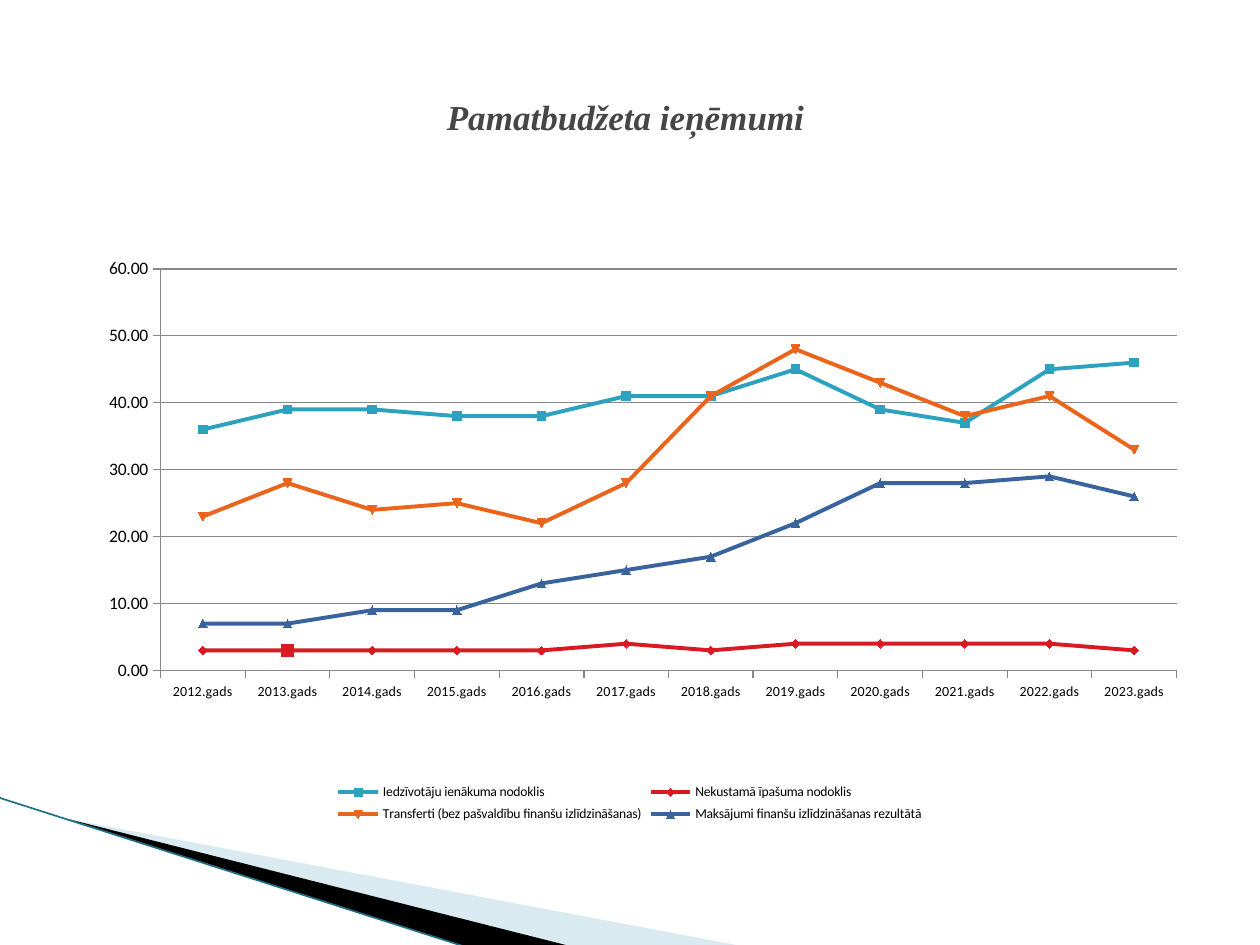
from lxml import etree
from pptx import Presentation
from pptx.chart.data import CategoryChartData
from pptx.dml.color import RGBColor
from pptx.enum.chart import (XL_CHART_TYPE, XL_LEGEND_POSITION as LegendPos,
                             XL_MARKER_STYLE as Marker, XL_TICK_MARK as Tick)
from pptx.enum.shapes import MSO_CONNECTOR
from pptx.enum.text import MSO_ANCHOR, PP_ALIGN
from pptx.oxml.ns import qn
from pptx.util import Inches, Pt

YEARS = [f"{year}.gads" for year in range(2012, 2024)]
REVENUES = [
    ("Iedzīvotāju ienākuma nodoklis", "2DA2BF",
     [36, 39, 39, 38, 38, 41, 41, 45, 39, 37, 45, 46]),
    ("Nekustamā īpašuma nodoklis", "DA1A23",
     [3, 3, 3, 3, 3, 4, 3, 4, 4, 4, 4, 3]),
    ("Transferti (bez pašvaldību finanšu izlīdzināšanas)", "EB641B",
     [23, 28, 24, 25, 22, 28, 41, 48, 43, 38, 41, 33]),
    ("Maksājumi finanšu izlīdzināšanas rezultātā", "39639D",
     [7, 7, 9, 9, 13, 15, 17, 22, 28, 28, 29, 26]),
]


def rgb(color):
    return RGBColor.from_string(color)


def style_font(font, size, color="000000", name="Calibri"):
    font.size, font.name = Pt(size), name
    font.color.rgb = rgb(color)


def add_wedge(slide, points, color, alpha=None):
    corners = [(Inches(x), Inches(y)) for x, y in points]
    builder = slide.shapes.build_freeform(*corners[0])
    builder.add_line_segments(corners[1:], close=True)
    wedge = builder.convert_to_shape()
    wedge.shadow.inherit = False
    wedge.fill.solid()
    wedge.fill.fore_color.rgb = rgb(color)
    wedge.line.fill.background()
    if alpha is not None:
        fill_color = wedge.fill._xPr.find(qn("a:solidFill"))[0]
        etree.SubElement(fill_color, qn("a:alpha"), val=str(alpha * 1000))


def add_corner_decoration(slide, left, top, bottom):
    # Pale and black wedges fanning out from one tip
    add_wedge(slide, [(left, top), (5.95, bottom), (4.56, bottom)], "A0CBDC", 40)
    add_wedge(slide, [(left, top), (4.57, bottom), (3.72, bottom)], "000000")
    # Edge line
    edge = slide.shapes.add_connector(MSO_CONNECTOR.STRAIGHT, Inches(-0.01),
                                      Inches(6.33), Inches(3.71), Inches(bottom))
    edge.line.color.rgb = rgb("1F7085")
    edge.line.width = Pt(0.95)
    etree.SubElement(edge._element.spPr, qn("a:effectLst"))


def add_title(slide, left, top, width, height):
    title = slide.shapes.title
    title.left, title.top = Inches(left), Inches(top)
    title.width, title.height = Inches(width), Inches(height)
    frame = title.text_frame
    frame.text = "Pamatbudžeta ieņēmumi "
    frame.vertical_anchor = MSO_ANCHOR.MIDDLE
    heading = frame.paragraphs[0]
    heading.alignment = PP_ALIGN.CENTER
    font = heading.runs[0].font
    style_font(font, 20, "464646", "Times New Roman")
    font.bold = font.italic = True


def place_plot(chart, x, y, width, height):
    plot_area = chart._chartSpace.chart.plotArea
    for old in plot_area.findall(qn("c:layout")):
        plot_area.remove(old)
    layout = etree.Element(qn("c:layout"))
    manual = etree.SubElement(layout, qn("c:manualLayout"))
    settings = [("layoutTarget", "inner"), ("xMode", "edge"), ("yMode", "edge"),
                ("x", x), ("y", y), ("w", width), ("h", height)]
    for tag, value in settings:
        etree.SubElement(manual, qn(f"c:{tag}"), val=str(value))
    plot_area.insert(0, layout)


def style_axis(axis, size):
    style_font(axis.tick_labels.font, size)
    axis.major_tick_mark, axis.minor_tick_mark = Tick.OUTSIDE, Tick.NONE
    axis.format.line.color.rgb = rgb("878787")


def style_marker(marker, style, size, color):
    marker.style, marker.size = style, size
    marker.format.fill.solid()
    marker.format.fill.fore_color.rgb = rgb(color)
    marker.format.line.color.rgb = rgb(color)


def style_line(line, color):
    line.color.rgb = rgb(color)
    line.width = Pt(2.25)


def add_revenue_chart(slide, left, top, width, height):
    revenue_data = CategoryChartData(number_format="0.00")
    revenue_data.categories = YEARS
    for name, _, values in REVENUES:
        revenue_data.add_series(name, values)
    chart = slide.shapes.add_chart(
        XL_CHART_TYPE.LINE_MARKERS, Inches(left), Inches(top),
        Inches(width), Inches(height), revenue_data).chart
    chart.has_title = False
    style_font(chart.font, 10)
    place_plot(chart, 0.086, 0.104, 0.896, 0.644)

    # Axes and gridlines
    style_axis(chart.category_axis, 8)
    shares = chart.value_axis
    style_axis(shares, 10)
    shares.minimum_scale, shares.maximum_scale, shares.major_unit = 0, 60, 10
    shares.tick_labels.number_format = "0.00"
    shares.tick_labels.number_format_is_linked = False
    shares.has_major_gridlines = True
    shares.major_gridlines.format.line.color.rgb = rgb("878787")

    # Legend
    chart.has_legend = True
    chart.legend.position = LegendPos.BOTTOM
    chart.legend.include_in_layout = False
    style_font(chart.legend.font, 7.8)

    # Revenue lines
    plot = chart.plots[0]
    plot.vary_by_categories = False
    for revenue, (_, color, _) in zip(plot.series, REVENUES):
        revenue.smooth = False
        style_line(revenue.format.line, color)
        style_marker(revenue.marker, Marker.AUTOMATIC, 5, color)

    # Larger marker on the property tax of 2013
    property_tax = plot.series[1]
    tax_2013 = property_tax.points[1]
    style_marker(tax_2013.marker, Marker.SQUARE, 7, REVENUES[1][1])
    style_line(tax_2013.format.line, REVENUES[1][1])


def main():
    deck = Presentation()
    deck.slide_width, deck.slide_height = Inches(10), Inches(7.5)
    slide = deck.slides.add_slide(deck.slide_layouts[5])
    slide.background.fill.solid()
    slide.background.fill.fore_color.rgb = rgb("FFFFFF")
    add_corner_decoration(slide, 0.54, 6.5, 7.52)
    add_title(slide, 0.5, 0.3, 9, 1.25)
    add_revenue_chart(slide, 0.5, 1.62, 9, 4.95)
    deck.save("out.pptx")


if __name__ == "__main__":
    main()
